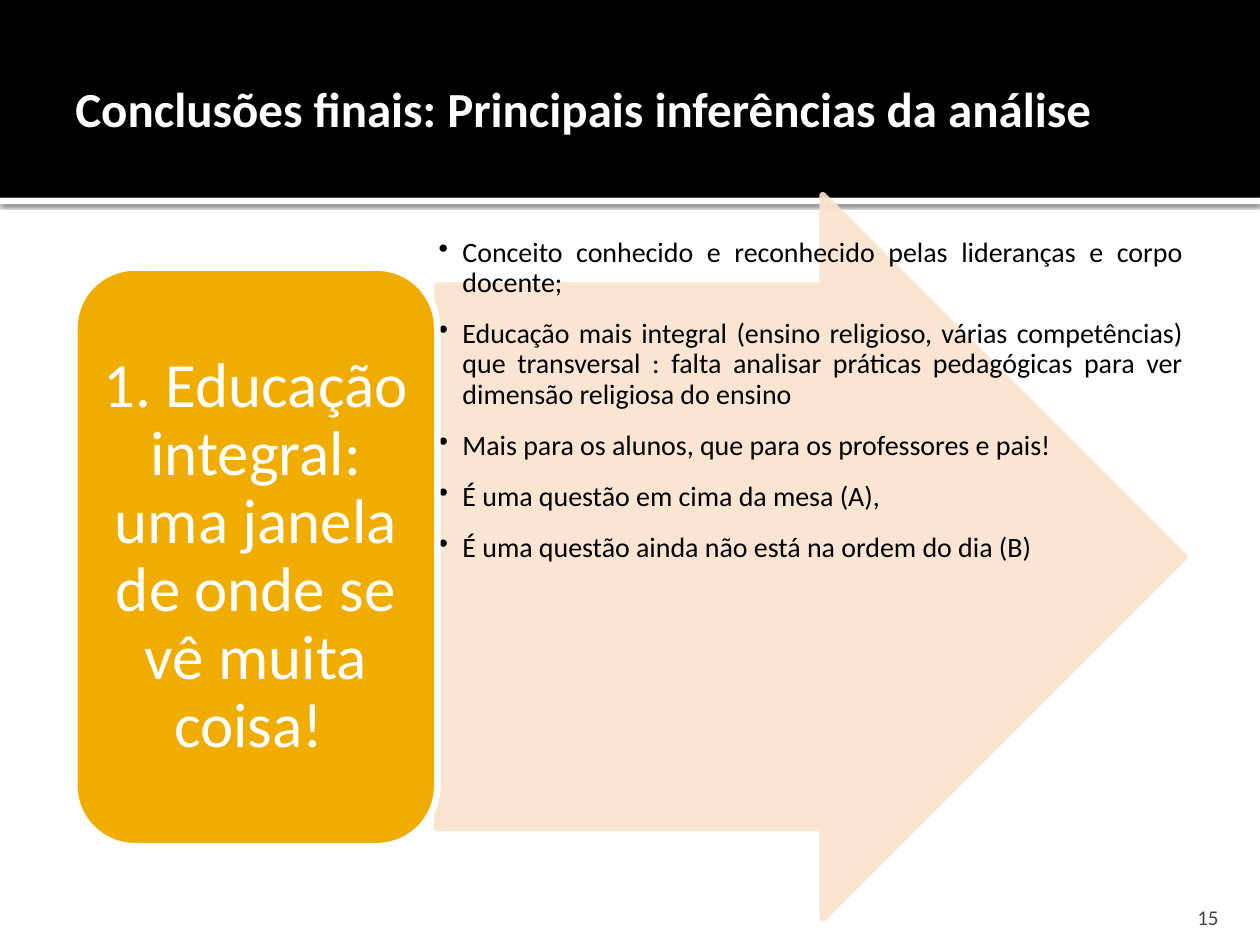
from lxml.etree import SubElement
from pptx import Presentation
from pptx.dml.color import RGBColor
from pptx.enum.shapes import MSO_SHAPE as Preset
from pptx.enum.text import MSO_ANCHOR as Anchor, PP_ALIGN as Align
from pptx.oxml.ns import qn
from pptx.util import Inches, Pt

WIDTH, HEIGHT = 10, 7.5
FONT = "Calibri"
COLORS = {
    "band": "000000",
    "paper": "FFFFFF",
    "theme": "F0AD00",
    "arrow": "F9E3CC",
    "ink": "000000",
    "number": "454545",
}
FINDINGS = [
    "Conceito conhecido e reconhecido pelas lideranças e corpo docente;",
    "Educação mais integral (ensino religioso, várias competências) que transversal : "
    "falta analisar práticas pedagógicas para ver dimensão religiosa do ensino",
    "Mais para os alunos, que para os professores e pais! ",
    "É uma questão em cima da mesa (A), ",
    "É uma questão ainda não está na ordem do dia (B)",
]


def rgb(name):
    return RGBColor.from_string(COLORS[name])


def add_block(slide, preset, box, fill, outline=None):
    block = slide.shapes.add_shape(preset, *map(Inches, box))
    block.shadow.inherit = False
    block.fill.solid()
    block.fill.fore_color.rgb = rgb(fill)
    if outline:
        block.line.color.rgb = rgb(outline)
        block.line.width = Pt(3.78)
    else:
        block.line.fill.background()
    return block


def set_frame(shape, insets, anchor):
    frame = shape.text_frame
    frame.word_wrap = True
    frame.vertical_anchor = anchor
    (frame.margin_left, frame.margin_top,
     frame.margin_right, frame.margin_bottom) = map(Inches, insets)
    return frame


def add_label(slide, box, insets, anchor):
    return set_frame(slide.shapes.add_textbox(*map(Inches, box)), insets, anchor)


def write(paragraph, text, size, color, align, bold=False):
    paragraph.alignment = align
    run = paragraph.add_run()
    run.text = text
    run.font.name = FONT
    run.font.size = Pt(size)
    run.font.bold = bold
    run.font.color.rgb = rgb(color)


def add_bullet(paragraph, indent):
    props = paragraph._p.get_or_add_pPr()
    props.set("marL", str(Inches(indent)))
    props.set("indent", str(-Inches(indent)))
    SubElement(props, qn("a:buChar"), char="•")


def make_translucent(arrow, opacity):
    for color in arrow._element.spPr.iter(qn("a:srgbClr")):
        SubElement(color, qn("a:alpha"), val=str(opacity * 1000))


def cast_shadow(shape, opacity, blur, distance):
    effects = shape._element.spPr.find(qn("a:effectLst"))
    shadow = SubElement(effects, qn("a:outerShdw"), blurRad=str(Pt(blur)),
                        dist=str(Pt(distance)), dir="5400000", rotWithShape="0")
    color = SubElement(shadow, qn("a:srgbClr"), val=COLORS["ink"])
    SubElement(color, qn("a:alpha"), val=str(opacity * 1000))


def build_header(slide, box):
    left, top, width, height = box
    rule = add_block(slide, Preset.RECTANGLE, (left, top + height, width, 0.05), "paper")
    cast_shadow(rule, 60, 2.5, 0.8)
    add_block(slide, Preset.RECTANGLE, box, "band")
    margin = width * 0.05
    title = add_label(slide, (left + margin, top + 0.17, width - 2 * margin, height - 0.2),
                      (0.1, 0.05, 0.05, 0.05), Anchor.MIDDLE)
    write(title.paragraphs[0], "Conclusões finais: Principais inferências da análise",
          28, "paper", Align.LEFT, bold=True)


def build_findings(slide, box):
    arrow = add_block(slide, Preset.RIGHT_ARROW, box, "arrow", "arrow")
    arrow.adjustments[0], arrow.adjustments[1] = 0.75, 0.5
    make_translucent(arrow, 90)
    frame = add_label(slide, box, (0.01, 0.34, 0.01, 0.01), Anchor.TOP)
    for index, finding in enumerate(FINDINGS):
        paragraph = frame.add_paragraph() if index else frame.paragraphs[0]
        paragraph.line_spacing = 0.9
        paragraph.space_after = Pt(12)
        add_bullet(paragraph, 0.19)
        write(paragraph, finding, 16, "ink", Align.JUSTIFY)


def build_theme(slide, box):
    card = add_block(slide, Preset.ROUNDED_RECTANGLE, box, "theme", "paper")
    frame = set_frame(card, (0.29, 0.21, 0.29, 0.21), Anchor.MIDDLE)
    frame.margin_left = frame.margin_right = Inches(0.01)
    paragraph = frame.paragraphs[0]
    paragraph.line_spacing = 0.9
    write(paragraph, "1. Educação integral: uma janela de onde se vê muita coisa! ",
          36, "paper", Align.CENTER)


def build_diagram(slide, box):
    left, top, width, height = box
    card_width, card_height = width * 0.327, height * 0.8
    build_findings(slide, (left + card_width, top, width - card_width, height))
    build_theme(slide, (left, top + (height - card_height) / 2, card_width, card_height))


def build_page_number(slide, box):
    frame = add_label(slide, box, (0.1, 0.05, 0.1, 0), Anchor.BOTTOM)
    write(frame.paragraphs[0], "15", 12, "number", Align.RIGHT)


def main():
    deck = Presentation()
    deck.slide_width, deck.slide_height = Inches(WIDTH), Inches(HEIGHT)
    slide = deck.slides.add_slide(deck.slide_layouts[6])
    build_header(slide, (0, 0, WIDTH, 1.57))
    build_diagram(slide, (0.59, 1.55, 8.81, 5.74))
    build_page_number(slide, (8.97, 7.08, 0.8, 0.3))
    deck.save("out.pptx")


if __name__ == "__main__":
    main()
